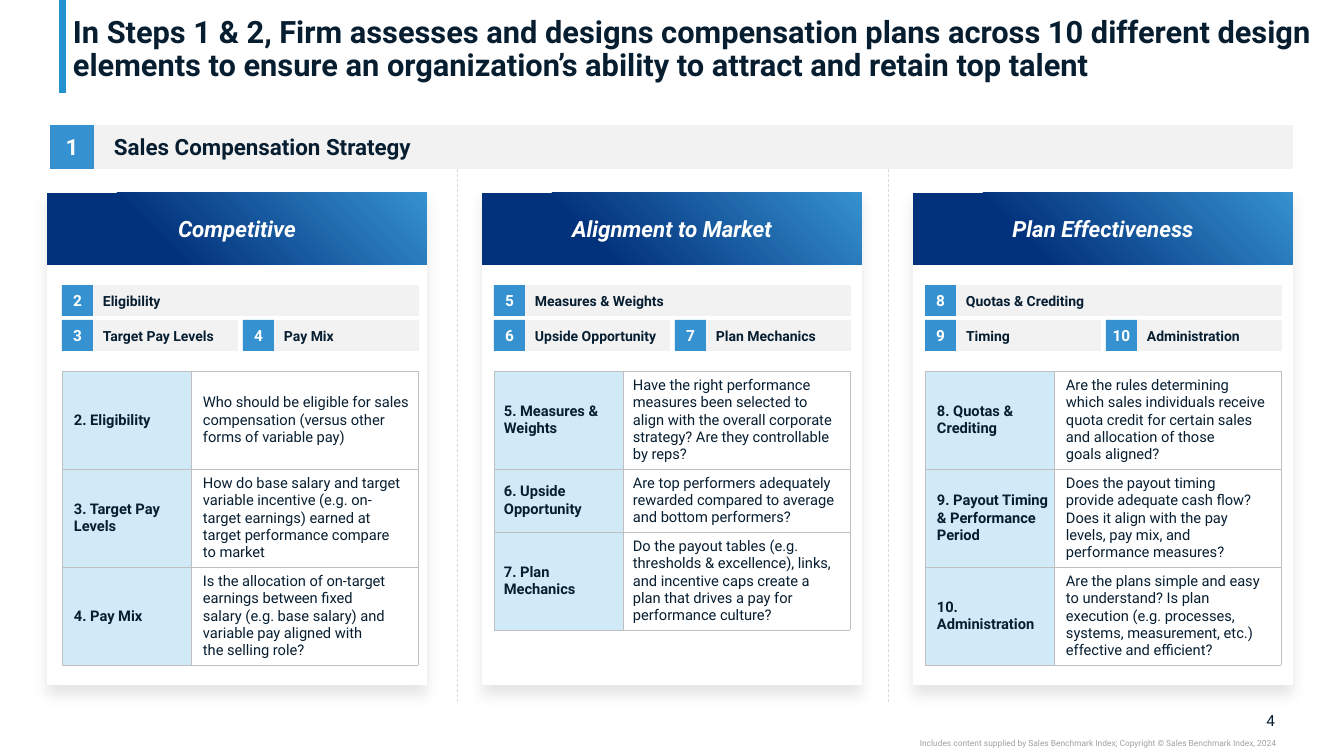
from lxml.etree import SubElement
from pptx import Presentation
from pptx.dml.color import RGBColor
from pptx.enum.dml import MSO_LINE
from pptx.enum.shapes import MSO_CONNECTOR, MSO_SHAPE
from pptx.enum.text import MSO_ANCHOR, MSO_AUTO_SIZE, PP_ALIGN
from pptx.oxml import parse_xml
from pptx.oxml.ns import nsdecls, qn
from pptx.util import Pt

# Content: "|" marks a line break inside a paragraph
TITLE = ("In Steps 1 & 2, Firm assesses and designs compensation plans across 10 different design "
         "elements to ensure an organization’s ability to attract and retain top talent")
SECTION = ("1", "Sales Compensation Strategy")
PAGE_NUMBER = "4"
COPYRIGHT = "Includes content supplied by Sales Benchmark Index; Copyright © Sales Benchmark Index, 2024"
PILLARS = [
    {"name": "Competitive", "card": 47, "content": 62, "rows": [98, 98, 98], "margins": (12, 0, 0, 0),
     "chips": [("2", "Eligibility"), ("3", "Target Pay Levels"), ("4", "Pay Mix")],
     "table": [
         ("2. Eligibility",
          "Who should be eligible for sales compensation (versus other forms of variable pay)"),
         ("3. Target Pay Levels",
          "How do base salary and target variable incentive (e.g. on-|target earnings) earned at|"
          "target performance compare|to market"),
         ("4. Pay Mix",
          "Is the allocation of on-target earnings between fixed|salary (e.g. base salary) and "
          "variable pay aligned with|the selling role?")]},
    {"name": "Alignment to Market", "card": 482, "content": 494, "rows": [98, 63, 98], "margins": (10, 5, 10, 5),
     "chips": [("5", "Measures & Weights"), ("6", "Upside Opportunity"), ("7", "Plan Mechanics")],
     "table": [
         ("5. Measures & Weights",
          "Have the right performance measures been selected to align with the overall corporate "
          "strategy? Are they controllable|by reps?"),
         ("6. Upside Opportunity",
          "Are top performers adequately rewarded compared to average and bottom performers?"),
         ("7. Plan Mechanics",
          "Do the payout tables (e.g. thresholds & excellence), links, and incentive caps create a "
          "plan that drives a pay for performance culture?")]},
    {"name": "Plan Effectiveness", "card": 913, "content": 925, "rows": [98, 98, 98], "margins": (12, 0, 0, 0),
     "chips": [("8", "Quotas & Crediting"), ("9", "Timing"), ("10", "Administration")],
     "table": [
         ("8. Quotas & Crediting",
          "Are the rules determining|which sales individuals receive quota credit for certain sales|"
          "and allocation of those|goals aligned?"),
         ("9. Payout Timing & Performance Period",
          "Does the payout timing|provide adequate cash flow?|Does it align with the pay|"
          "levels, pay mix, and|performance measures?"),
         ("10. Administration",
          "Are the plans simple and easy|to understand? Is plan|execution (e.g. processes, "
          "systems, measurement, etc.)|effective and efficient?")]},
]

# Layout in px
CARD_WIDTH, CONTENT_WIDTH = 380, 357
CHIP_TOP, CHIP_STEP, CHIP_HEIGHT, CHIP_GAP = 285, 35, 31, 5
CHIP_WIDTH = (CONTENT_WIDTH - CHIP_GAP) // 2
TABLE_TOP, TABLE_COLUMNS = 371, (129, 227)
DIVIDERS = (457, 888)

FONT, INK, WHITE, BLUE, NAVY = "Roboto", "071E31", "FFFFFF", "3591CF", "03327C"
GRAY, PALE, ACCENT, RULE, BORDER, MUTED = "F2F2F2", "D1EAF7", "2391CF", "D9D9D9", "BFBFBF", "A0A0A0"


def px(value):
    return round(value * 914400 / 100.8)


def color(value):
    return RGBColor.from_string(value)


def write(frame, text, size, ink=INK, bold=False, italic=False, align=PP_ALIGN.LEFT):
    frame.text = text.replace("|", "\v")
    para = frame.paragraphs[0]
    para.alignment = align
    for span in para.runs:
        font = span.font
        font.name, font.size, font.bold, font.italic = FONT, Pt(size), bold, italic
        font.color.rgb = color(ink)
    return para


def set_margins(target, left=0, top=0, right=0, bottom=0):
    target.margin_left, target.margin_top = px(left), px(top)
    target.margin_right, target.margin_bottom = px(right), px(bottom)


def prepare(frame, anchor=MSO_ANCHOR.MIDDLE, inset=0):
    frame.word_wrap = True
    frame.auto_size = MSO_AUTO_SIZE.NONE
    frame.vertical_anchor = anchor
    set_margins(frame, left=inset)
    return frame


def add_rect(page, left, top, width, height, fill=WHITE):
    rect = page.shapes.add_shape(MSO_SHAPE.RECTANGLE, px(left), px(top), px(width), px(height))
    rect.shadow.inherit = False
    rect.fill.solid()
    rect.fill.fore_color.rgb = color(fill)
    rect.line.fill.background()
    return rect


def add_chip(page, left, top, width, height, number, label, number_size, label_size, inset):
    bar = add_rect(page, left, top, width, height, GRAY)
    write(prepare(bar.text_frame, inset=inset), label, label_size, bold=True)
    badge = add_rect(page, left, top, height, height, BLUE)
    write(prepare(badge.text_frame), number, number_size, WHITE, bold=True, align=PP_ALIGN.CENTER)


def add_line(page, x, top, bottom, ink, width, dash=None):
    line = page.shapes.add_connector(MSO_CONNECTOR.STRAIGHT, px(x), px(top), px(x), px(bottom))
    line.line.color.rgb = color(ink)
    line.line.width = Pt(width)
    if dash:
        line.line.dash_style = dash
    SubElement(line._element.spPr, qn("a:effectLst"))


def add_note(page, left, top, width, height, text, size, ink, anchor):
    box = page.shapes.add_textbox(px(left), px(top), px(width), px(height))
    write(prepare(box.text_frame, anchor), text, size, ink, align=PP_ALIGN.RIGHT)


def add_card(page, left, name):
    card = add_rect(page, left, 190, CARD_WIDTH, 495)
    effects = card._element.spPr.find(qn("a:effectLst"))
    effects.append(parse_xml(
        f'<a:outerShdw {nsdecls("a")} blurRad="{Pt(10)}" dist="{Pt(7)}" dir="5400000" algn="t" '
        'rotWithShape="0"><a:srgbClr val="000000"><a:alpha val="10000"/></a:srgbClr></a:outerShdw>'))
    header = add_rect(page, left, 193, CARD_WIDTH, 72)
    header.fill.gradient()
    header.fill.gradient_angle = 45
    for stop, (position, tone) in zip(header.fill.gradient_stops, ((0.3, NAVY), (1, BLUE))):
        stop.position = position
        stop.color.rgb = color(tone)
    write(prepare(header.text_frame), name, 16, WHITE, True, True, PP_ALIGN.CENTER)


def add_border(cell):
    properties = cell._tc.get_or_add_tcPr()
    for side in ("lnL", "lnR", "lnT", "lnB"):
        properties.append(parse_xml(
            f'<a:{side} {nsdecls("a")} w="{Pt(0.5)}"><a:solidFill><a:srgbClr val="{BORDER}"/>'
            f'</a:solidFill></a:{side}>'))


def add_questions(page, pillar):
    heights = pillar["rows"]
    frame = page.shapes.add_table(len(heights), len(TABLE_COLUMNS), px(pillar["content"]), px(TABLE_TOP),
                                  px(sum(TABLE_COLUMNS)), px(sum(heights)))
    table = frame.table
    table.first_row = table.horz_banding = False
    for column, width in zip(table.columns, TABLE_COLUMNS):
        column.width = px(width)
    for row, height, texts in zip(table.rows, heights, pillar["table"]):
        row.height = px(height)
        for index, (cell, text) in enumerate(zip(row.cells, texts)):
            is_label = index == 0
            cell.vertical_anchor = MSO_ANCHOR.MIDDLE
            set_margins(cell, *pillar["margins"])
            add_border(cell)
            cell.fill.solid()
            cell.fill.fore_color.rgb = color(PALE if is_label else WHITE)
            write(cell.text_frame, text, 10.5, bold=is_label)


def main():
    deck = Presentation()
    deck.slide_width, deck.slide_height = px(1344), px(756)
    page = deck.slides.add_slide(deck.slide_layouts[5])

    # Title and accent
    title = page.shapes.title
    title.left, title.top, title.width, title.height = px(73), px(17), px(1243), px(55)
    para = write(prepare(title.text_frame, MSO_ANCHOR.TOP), TITLE, 22, bold=True)
    para.line_spacing = 0.9
    add_line(page, 63, 0, 93, ACCENT, 5)

    # Dividers and section bar
    for x in DIVIDERS:
        add_line(page, x, 139, 702, RULE, 0.5, MSO_LINE.DASH)
    add_chip(page, 50, 125, 1243, 44, *SECTION, 16, 16, 64)

    # Pillars: card, chips, table
    for pillar in PILLARS:
        add_card(page, pillar["card"], pillar["name"])
        for index, (number, label) in enumerate(pillar["chips"]):
            left = pillar["content"] + (CHIP_WIDTH + CHIP_GAP) * (index == 2)
            top = CHIP_TOP + CHIP_STEP * (index > 0)
            width = CHIP_WIDTH if index else CONTENT_WIDTH
            add_chip(page, left, top, width, CHIP_HEIGHT, number, label, 11, 10, 41)
        add_questions(page, pillar)

    # Footer
    add_note(page, 1242, 711, 33, 19, PAGE_NUMBER, 11, INK, MSO_ANCHOR.MIDDLE)
    add_note(page, 756, 738, 520, 10, COPYRIGHT, 6, MUTED, MSO_ANCHOR.TOP)
    deck.save("out.pptx")


if __name__ == "__main__":
    main()
